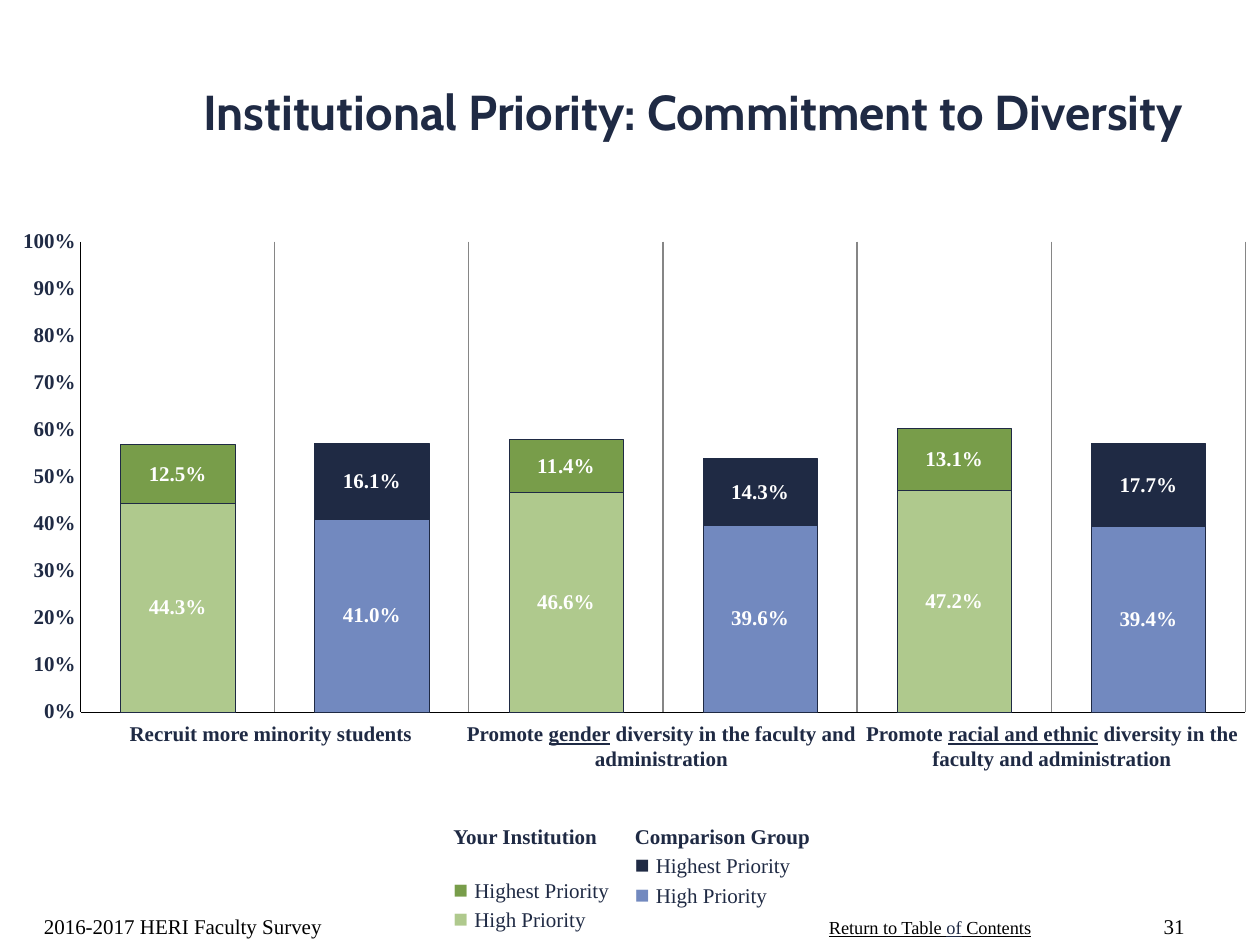
from lxml import etree
from pptx import Presentation
from pptx.chart.data import CategoryChartData
from pptx.dml.color import RGBColor
from pptx.enum.chart import XL_CHART_TYPE, XL_TICK_LABEL_POSITION, XL_TICK_MARK
from pptx.enum.text import MSO_ANCHOR, PP_ALIGN
from pptx.oxml import parse_xml
from pptx.oxml.ns import nsdecls, qn
from pptx.util import Inches, Pt

STACKED = XL_CHART_TYPE.COLUMN_STACKED
NO_LABELS = XL_TICK_LABEL_POSITION.NONE
NO_TICKS = XL_TICK_MARK.NONE
TOP, MIDDLE, BOTTOM = MSO_ANCHOR.TOP, MSO_ANCHOR.MIDDLE, MSO_ANCHOR.BOTTOM
LEFT, CENTER, RIGHT = PP_ALIGN.LEFT, PP_ALIGN.CENTER, PP_ALIGN.RIGHT

NAVY = RGBColor(0x1F, 0x2A, 0x44)
BLUE = RGBColor(0x72, 0x89, 0xBF)
GREEN = RGBColor(0x78, 0x9D, 0x4A)
LIGHT_GREEN = RGBColor(0xAF, 0xC9, 0x8D)
GRAY = RGBColor(0x86, 0x86, 0x86)
BLACK = RGBColor(0, 0, 0)
WHITE = RGBColor(0xFF, 0xFF, 0xFF)

SERIF = "Times New Roman"
TITLE_FONT = "Cabin"

# Name, values, institution colour, comparison colour
SERIES = [
    ("High Priority", (0.443, 0.41, 0.466, 0.396, 0.472, 0.394), LIGHT_GREEN, BLUE),
    ("Highest Priority", (0.125, 0.161, 0.114, 0.143, 0.131, 0.177), GREEN, NAVY),
]
# Plain, underlined and plain part of each question
QUESTIONS = [
    ("Recruit more minority students", "", ""),
    ("Promote ", "gender", " diversity in the faculty and administration"),
    ("Promote ", "racial and ethnic", " diversity in the faculty and administration"),
]
# Heading, left edge, gap above the entries, entry colours
LEGENDS = [
    ("Your Institution", 3.5, 14, (GREEN, LIGHT_GREEN)),
    ("Comparison Group", 4.94, 0, (NAVY, BLUE)),
]


def style_font(font, size, color, bold=False, name=SERIF):
    font.name, font.size, font.bold = name, Pt(size), bold
    font.color.rgb = color


def add_box(page, left, top, width, height, anchor=TOP, wrap=True):
    frame = page.shapes.add_textbox(
        Inches(left), Inches(top), Inches(width), Inches(height)).text_frame
    frame.word_wrap = wrap
    frame.vertical_anchor = anchor
    return frame


def add_line(page, text, place, size, color, align=LEFT, anchor=BOTTOM,
             bold=False, name=SERIF):
    """Add a box that holds one evenly styled paragraph."""
    para = add_box(page, *place, anchor=anchor).paragraphs[0]
    para.text, para.alignment = text, align
    style_font(para.font, size, color, bold, name)


def add_return_note(page):
    para = add_box(page, 6.48, 7.22, 1.82, 0.28, wrap=False).paragraphs[0]
    style_font(para.font, 10.5, BLACK)
    para.font.underline = True
    for text, color in (("Return to Table ", BLACK), ("of", NAVY), (" Contents", BLACK)):
        span = para.add_run()
        span.text = text
        span.font.color.rgb = color


def add_question(page, index, parts):
    width = 3.1
    frame = add_box(page, 0.6 + index * width, 5.67, width, 0.71)
    frame.margin_left = frame.margin_right = 0
    para = frame.paragraphs[0]
    para.alignment = CENTER
    style_font(para.font, 12, NAVY, bold=True)
    for text, underline in zip(parts, (False, True, False)):
        if text:
            span = para.add_run()
            span.text = text
            span.font.underline = underline


def add_legend(page, heading, left, gap, colors):
    frame = add_box(page, left, 6.49, 1.6, 0.98)
    para = frame.paragraphs[0]
    para.text = heading
    style_font(para.font, 12, NAVY, bold=True)
    for index, (color, series) in enumerate(zip(colors, reversed(SERIES))):
        para = frame.add_paragraph()
        para.space_before = Pt(0 if index else gap)
        style_font(para.font, 12, NAVY)
        marker, label = para.add_run(), para.add_run()
        marker.text, label.text = "■ ", series[0]
        marker.font.size = Pt(14)
        marker.font.color.rgb = color


def fill_bar(bar_format, color):
    bar_format.fill.solid()
    bar_format.fill.fore_color.rgb = color
    bar_format.line.color.rgb = NAVY
    bar_format.line.width = Pt(0.25)


def style_series(series, color, comparison_color):
    fill_bar(series.format, color)
    for index in range(1, len(series.values), 2):
        fill_bar(series.points[index].format, comparison_color)
    labels = series.data_labels
    labels.show_value = True
    labels.number_format, labels.number_format_is_linked = "0.0%", False
    style_font(labels.font, 12, WHITE, bold=True)


def style_axes(chart):
    categories, values = chart.category_axis, chart.value_axis
    for axis in (categories, values):
        axis.major_tick_mark = axis.minor_tick_mark = NO_TICKS
        axis.format.line.color.rgb = BLACK
        axis.format.line.width = Pt(0.19)
    categories.tick_label_position = NO_LABELS
    categories.has_major_gridlines = True
    categories.major_gridlines.format.line.color.rgb = GRAY
    values.has_major_gridlines = False
    values.minimum_scale, values.maximum_scale, values.major_unit = 0, 1, 0.1
    values.tick_labels.number_format = "0%"
    values.tick_labels.number_format_is_linked = False


def place_plot(chart, x, y, w, h):
    """Fix the inner plot area, in fractions of the chart."""
    plot_area = chart.element.find(".//" + qn("c:plotArea"))
    for old in plot_area.findall(qn("c:layout")):
        plot_area.remove(old)
    layout = parse_xml(f"<c:layout {nsdecls('c')}><c:manualLayout/></c:layout>")
    settings = [("layoutTarget", "inner"), ("xMode", "edge"), ("yMode", "edge"),
                ("x", x), ("y", y), ("w", w), ("h", h)]
    for tag, value in settings:
        etree.SubElement(layout[0], qn("c:" + tag)).set("val", str(value))
    plot_area.insert(0, layout)


def add_priority_chart(page):
    data = CategoryChartData(number_format="0.0%")
    data.categories = ["1", "2", "3", "4", "5", "6"]
    for name, values, *_ in SERIES:
        data.add_series(name, values)
    chart = page.shapes.add_chart(
        STACKED, Inches(0.06), Inches(1.75), Inches(9.83), Inches(4), data).chart
    chart.has_legend = chart.has_title = False
    style_font(chart.font, 12, NAVY, bold=True)
    plot = chart.plots[0]
    plot.gap_width, plot.overlap, plot.vary_by_categories = 70, 100, False
    for series, (_, _, color, comparison_color) in zip(plot.series, SERIES):
        style_series(series, color, comparison_color)
    style_axes(chart)
    place_plot(chart, 0.059, 0.042, 0.941, 0.933)


def main():
    deck = Presentation()
    deck.slide_width, deck.slide_height = Inches(10), Inches(7.5)
    page = deck.slides.add_slide(deck.slide_layouts[6])
    add_return_note(page)
    add_line(page, "31", (9, 7, 0.5, 0.5), 12, BLACK, align=RIGHT)
    add_line(page, "Institutional Priority: Commitment to Diversity",
             (1, 0.17, 9, 1.42), 28, NAVY, CENTER, MIDDLE, True, TITLE_FONT)
    add_priority_chart(page)
    for legend in LEGENDS:
        add_legend(page, *legend)
    for index, parts in enumerate(QUESTIONS):
        add_question(page, index, parts)
    add_line(page, "2016-2017 HERI Faculty Survey", (0.25, 7, 3.17, 0.5), 12, BLACK)
    deck.save("out.pptx")


if __name__ == "__main__":
    main()
